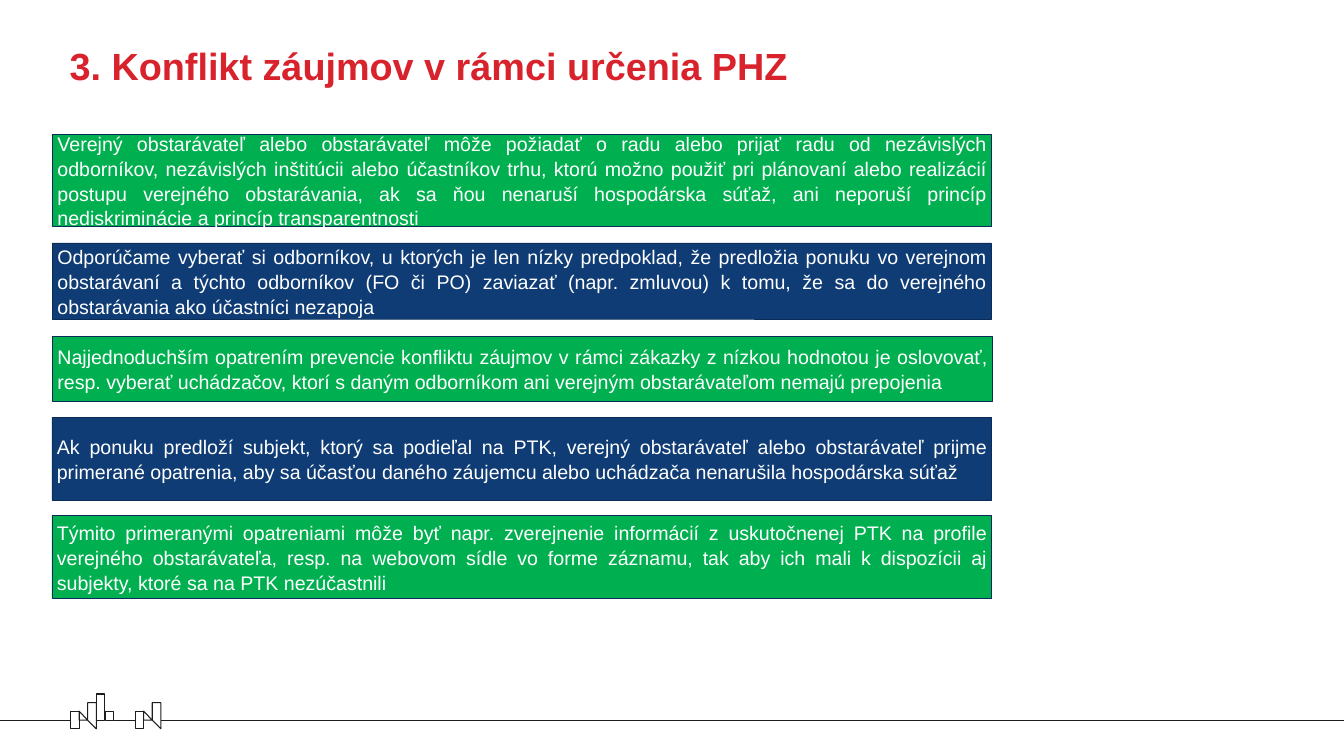
from pptx import Presentation
from pptx.dml.color import RGBColor
from pptx.enum.shapes import MSO_CONNECTOR, MSO_SHAPE
from pptx.enum.text import MSO_ANCHOR, PP_ALIGN
from pptx.oxml.ns import qn
from pptx.util import Emu, Pt

PX = 9144
RECTANGLE = MSO_SHAPE.RECTANGLE
STRAIGHT = MSO_CONNECTOR.STRAIGHT
TOP, MIDDLE = MSO_ANCHOR.TOP, MSO_ANCHOR.MIDDLE
LEFT, JUSTIFY = PP_ALIGN.LEFT, PP_ALIGN.JUSTIFY
COLORS = {
    "red": "D8222C",
    "green": "00B050",
    "blue": "0F3C74",
    "border": "0B2C56",
    "ink": "1D1E1C",
    "white": "FFFFFF",
}
GROUND = 1429
HOUSE_STEP = 128
TITLE = "3. Konflikt záujmov v rámci určenia PHZ"
PANELS = [
    (104, 267, 1862, 182, "green",
     "Verejný obstarávateľ alebo obstarávateľ môže požiadať o radu alebo prijať radu "
     "od nezávislých odborníkov, nezávislých inštitúcii alebo účastníkov trhu, ktorú "
     "možno použiť pri plánovaní alebo realizácií postupu verejného obstarávania, ak "
     "sa ňou nenaruší hospodárska súťaž, ani neporuší princíp nediskriminácie a "
     "princíp transparentnosti"),
    (104, 482, 1862, 151, "blue",
     "Odporúčame vyberať si odborníkov, u ktorých je len nízky predpoklad, že "
     "predložia ponuku vo verejnom obstarávaní a týchto odborníkov (FO či PO) "
     "zaviazať (napr. zmluvou) k tomu, že sa do verejného obstarávania ako účastníci "
     "nezapoja"),
    (104, 667, 1864, 129, "green",
     "Najjednoduchším opatrením prevencie konfliktu záujmov v rámci zákazky z nízkou "
     "hodnotou je oslovovať, resp. vyberať uchádzačov, ktorí s daným odborníkom ani "
     "verejným obstarávateľom nemajú prepojenia"),
    (103, 828, 1864, 164, "blue",
     "Ak ponuku predloží subjekt, ktorý sa podieľal na PTK, verejný obstarávateľ "
     "alebo obstarávateľ prijme primerané opatrenia, aby sa účasťou daného záujemcu "
     "alebo uchádzača nenarušila hospodárska súťaž"),
    (103, 1023, 1864, 164, "green",
     "Týmito primeranými opatreniami môže byť napr. zverejnenie informácií z "
     "uskutočnenej PTK na profile verejného obstarávateľa, resp. na webovom sídle vo "
     "forme záznamu, tak aby ich mali k dispozícii aj subjekty, ktoré sa na PTK "
     "nezúčastnili"),
]


def px(length):
    """Turn a length in px into EMU."""
    return Emu(length * PX)


def rgb(name):
    """Look up a named colour."""
    return RGBColor.from_string(COLORS[name])


def write(frame, text, size=28, color="white", bold=False, align=JUSTIFY, anchor=MIDDLE):
    """Put one formatted paragraph into a text frame."""
    frame.word_wrap = True
    frame.vertical_anchor = anchor
    para = frame.paragraphs[0]
    para.alignment = align
    para.line_spacing = 1.05
    span = para.add_run()
    span.text = text
    span.font.name = "Arial"
    span.font.size = Pt(size)
    span.font.bold = bold
    span.font.color.rgb = rgb(color)


def stroke(shape, color="ink", width=1.5):
    """Outline a shape."""
    shape.line.color.rgb = rgb(color)
    shape.line.width = Pt(width)


def add_title(page, text):
    """Add the heading of the page."""
    box = page.shapes.add_textbox(px(138), px(75), px(2391), px(209))
    frame = box.text_frame
    frame.margin_left = frame.margin_right = frame.margin_bottom = 0
    frame.margin_top = px(5)
    write(frame, text, size=54, color="red", bold=True, align=LEFT, anchor=TOP)


def add_panel(page, left, top, width, height, fill, text):
    """Add a filled panel with justified text."""
    panel = page.shapes.add_shape(RECTANGLE, px(left), px(top), px(width), px(height))
    panel.shadow.inherit = False
    panel.fill.solid()
    panel.fill.fore_color.rgb = rgb(fill)
    stroke(panel, "border", 1)
    write(panel.text_frame, text)


def add_block(page, left, top, width, height):
    """Add an unfilled rectangle of the skyline."""
    block = page.shapes.add_shape(RECTANGLE, px(left), px(top), px(width), px(height))
    block.shadow.inherit = False
    block.fill.background()
    stroke(block)


def add_outline(page, points):
    """Add an unfilled closed outline of the skyline."""
    builder = page.shapes.build_freeform(*points[0], scale=PX)
    builder.add_line_segments(points[1:], close=True)
    outline = builder.convert_to_shape()
    outline.shadow.inherit = False
    outline.fill.background()
    stroke(outline)


def add_ground(page, start, end):
    """Add a stretch of the ground line."""
    line = page.shapes.add_connector(STRAIGHT, px(start), px(GROUND), px(end), px(GROUND))
    stroke(line)
    properties = line._element.spPr
    properties.append(properties.makeelement(qn("a:effectLst"), {}))


def add_house(page, left):
    """Add a wall, a slanted roof and a tower."""
    roof, tower, right = left + 17, left + 34, left + 51
    add_outline(page, [(tower, GROUND), (roof, GROUND), (roof, 1411)])
    add_block(page, left, 1411, 17, 35)
    add_outline(page, [(tower, 1394), (tower, GROUND), (right, 1446), (right, 1394)])


def add_skyline(page):
    """Add the houses and the ground line along the foot."""
    add_block(page, 209, 1411, 17, 18)
    for index in range(2):
        add_house(page, 140 + index * HOUSE_STEP)
    add_block(page, 191, 1377, 17, 52)
    for start, end in [(226, 269), (320, 2665), (1, 140)]:
        add_ground(page, start, end)


def main():
    """Build and save the deck."""
    deck = Presentation()
    deck.slide_width, deck.slide_height = px(2666), px(1500)
    page = deck.slides.add_slide(deck.slide_layouts[6])
    add_skyline(page)
    add_title(page, TITLE)
    for panel in PANELS:
        add_panel(page, *panel)
    deck.save("out.pptx")


if __name__ == "__main__":
    main()
